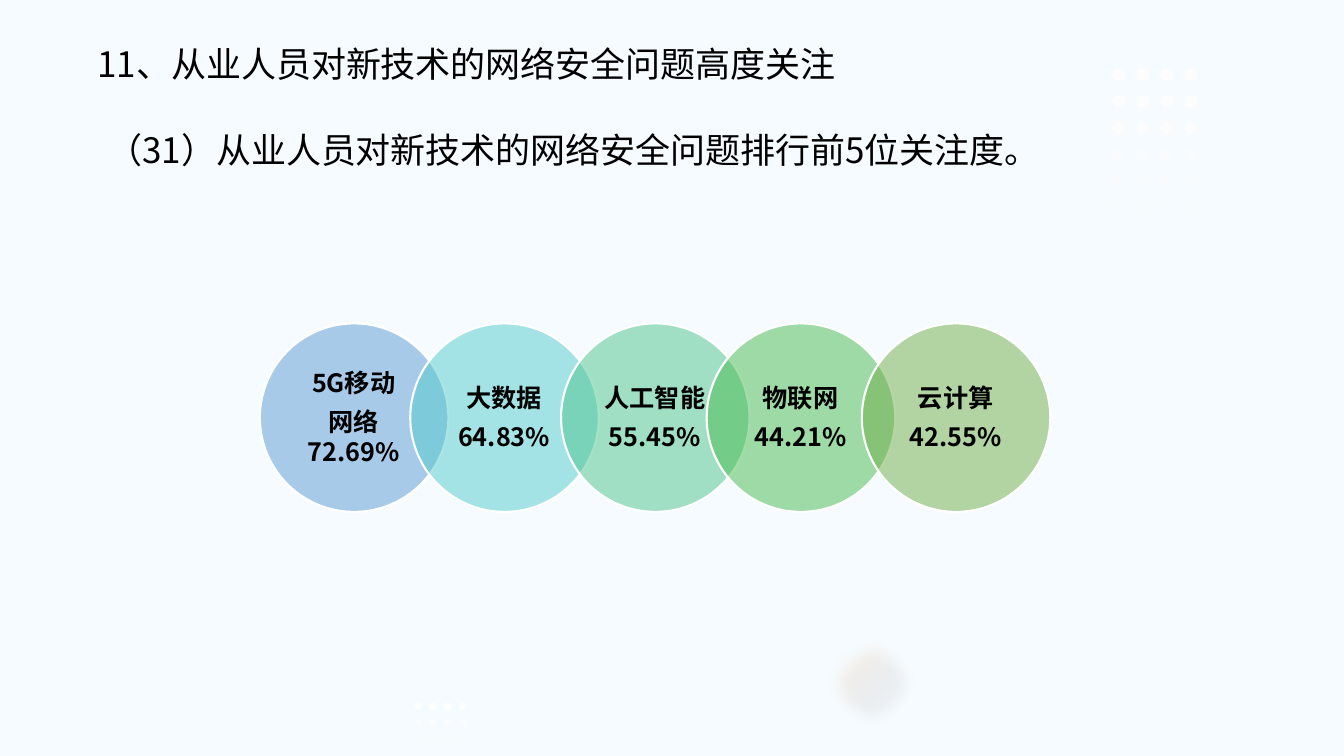
import math
from dataclasses import dataclass

from lxml import etree
from pptx import Presentation
from pptx import util as u
from pptx.dml.color import RGBColor
from pptx.enum import shapes, text
from pptx.oxml import ns

FONT = "Noto Sans CJK SC"
CIRCLE_TOP, CIRCLE_SIZE = 8.15, 4.75
LABEL_INSET, LABEL_SIZE = 0.69, 3.35


@dataclass
class Topic:
    left: float
    color: str
    lines: tuple[str, ...]


@dataclass
class DotGrid:
    left: float
    top: float
    columns: int
    rows: int
    step_x: float
    step_y: float
    size: float


@dataclass
class Heading:
    left: float
    top: float
    width: float
    height: float
    words: str
    line_spacing: float | None = None


TOPICS = [
    Topic(6.55, "5B9BD5", ("5G移动", "网络72.69%")),
    Topic(10.34, "54CCCD", ("大数据", "64.83%")),
    Topic(14.14, "4DC58D", ("人工智能", "55.45%")),
    Topic(17.81, "48BB4F", ("物联网", "44.21%")),
    Topic(21.72, "70AD47", ("云计算", "42.55%")),
]
DOT_GRIDS = [
    DotGrid(28.04, 1.72, 4, 6, 0.6, 0.67, 0.32),
    DotGrid(10.45, 17.71, 4, 3, 0.36, 0.4, 0.19),
]
SUBTITLE = Heading(2.46, 2.69, 30.63, 1.75,
                   "（31）从业人员对新技术的网络安全问题排行前5位关注度。", 1.4)
TITLE = Heading(2.21, 0.94, 26.47, 1.32, "11、从业人员对新技术的网络安全问题高度关注")


def rgb(value: str) -> RGBColor:
    return RGBColor.from_string(value)


def add_child(parent, tag: str, **attributes):
    return etree.SubElement(parent, ns.qn(tag), {k: str(v) for k, v in attributes.items()})


def set_alpha(color_element, percent: int) -> None:
    add_child(color_element, "a:alpha", val=percent * 1000)


def set_gradient(shape, stops: list[tuple[int, str, int]], radial: bool = False) -> None:
    """Fill with (position, colour, opacity) stops, downward or radial."""
    shape.fill.gradient()
    gradient = shape._element.spPr.find(ns.qn("a:gradFill"))
    for child in list(gradient):
        gradient.remove(child)
    stop_list = add_child(gradient, "a:gsLst")
    for position, color, opacity in stops:
        stop = add_child(stop_list, "a:gs", pos=position * 1000)
        set_alpha(add_child(stop, "a:srgbClr", val=color), opacity)
    if radial:
        path = add_child(gradient, "a:path", path="circle")
        add_child(path, "a:fillToRect", l=100000, t=100000)
    else:
        add_child(gradient, "a:lin", ang=5400000, scaled=0)


def add_ellipse(page, left: float, top: float, size: float):
    ellipse = page.shapes.add_shape(
        shapes.MSO_SHAPE.OVAL, u.Cm(left), u.Cm(top), u.Cm(size), u.Cm(size))
    ellipse.shadow.inherit = False
    return ellipse


def add_glow(page) -> None:
    glow = add_ellipse(page, 20.73, 15.98, 2.51)
    glow.line.fill.background()
    set_gradient(glow, [(0, "4B6C9A", 0), (70, "EACAA3", 25)], radial=True)
    effects = glow._element.spPr.find(ns.qn("a:effectLst"))
    add_child(effects, "a:softEdge", rad=u.Cm(0.35))


def add_dots(page, grid: DotGrid, sides: int = 16) -> None:
    radius = grid.size / 2
    builder = None
    for row in range(grid.rows):
        for column in range(grid.columns):
            center_x = grid.left + radius + column * grid.step_x
            center_y = grid.top + radius + row * grid.step_y
            angles = [2 * math.pi * side / sides for side in range(sides)]
            points = [(u.Cm(center_x + radius * math.cos(angle)),
                       u.Cm(center_y + radius * math.sin(angle))) for angle in angles]
            if builder is None:
                builder = page.shapes.build_freeform(*points[0])
            else:
                builder.move_to(*points[0])
            builder.add_line_segments(points[1:], close=True)
    dots = builder.convert_to_shape()
    dots.shadow.inherit = False
    dots.line.fill.background()
    set_gradient(dots, [(0, "FFFFFF", 100), (100, "FFFFFF", 0)])


def add_text(page, place: tuple[float, ...], lines: tuple[str, ...],
             frame_format: dict, para_format: dict, font_format: dict) -> None:
    box = page.shapes.add_textbox(*(u.Cm(length) for length in place))
    frame = box.text_frame
    for name, value in {"word_wrap": True, **frame_format}.items():
        setattr(frame, name, value)
    for index, line in enumerate(lines):
        para = frame.add_paragraph() if index else frame.paragraphs[0]
        for name, value in para_format.items():
            setattr(para, name, value)
        span = para.add_run()
        span.text = line
        for name, value in {"name": FONT, **font_format}.items():
            setattr(span.font, name, value)
        span.font.color.rgb = rgb("000000")
        add_child(span._r.get_or_add_rPr(), "a:ea", typeface=FONT)


def add_heading(page, heading: Heading) -> None:
    add_text(page, (heading.left, heading.top, heading.width, heading.height),
             (heading.words,),
             {"auto_size": text.MSO_AUTO_SIZE.SHAPE_TO_FIT_TEXT},
             {"line_spacing": heading.line_spacing}, {"size": u.Pt(25)})


def add_topic(page, topic: Topic) -> None:
    circle = add_ellipse(page, topic.left, CIRCLE_TOP, CIRCLE_SIZE)
    circle.fill.solid()
    circle.fill.fore_color.rgb = rgb(topic.color)
    set_alpha(circle._element.spPr.find(ns.qn("a:solidFill"))[0], 50)
    circle.line.color.rgb = rgb("FFFFFF")
    circle.line.width = u.Pt(1.5)
    add_text(page,
             (topic.left + LABEL_INSET, CIRCLE_TOP + LABEL_INSET, LABEL_SIZE, LABEL_SIZE),
             topic.lines,
             {"vertical_anchor": text.MSO_ANCHOR.MIDDLE,
              "margin_top": u.Cm(0.08), "margin_bottom": u.Cm(0.08)},
             {"alignment": text.PP_ALIGN.CENTER, "space_after": u.Pt(6.3)},
             {"size": u.Pt(18), "bold": True})


def main() -> None:
    deck = Presentation()
    deck.slide_width, deck.slide_height = u.Cm(33.87), u.Cm(19.05)
    page = deck.slides.add_slide(deck.slide_layouts[6])

    # Background and decoration
    page.background.fill.solid()
    page.background.fill.fore_color.rgb = rgb("F6FBFF")
    add_glow(page)
    for grid in DOT_GRIDS:
        add_dots(page, grid)

    # Subtitle, overlapping circles and title
    add_heading(page, SUBTITLE)
    for topic in TOPICS:
        add_topic(page, topic)
    add_heading(page, TITLE)

    deck.save("out.pptx")


if __name__ == "__main__":
    main()
